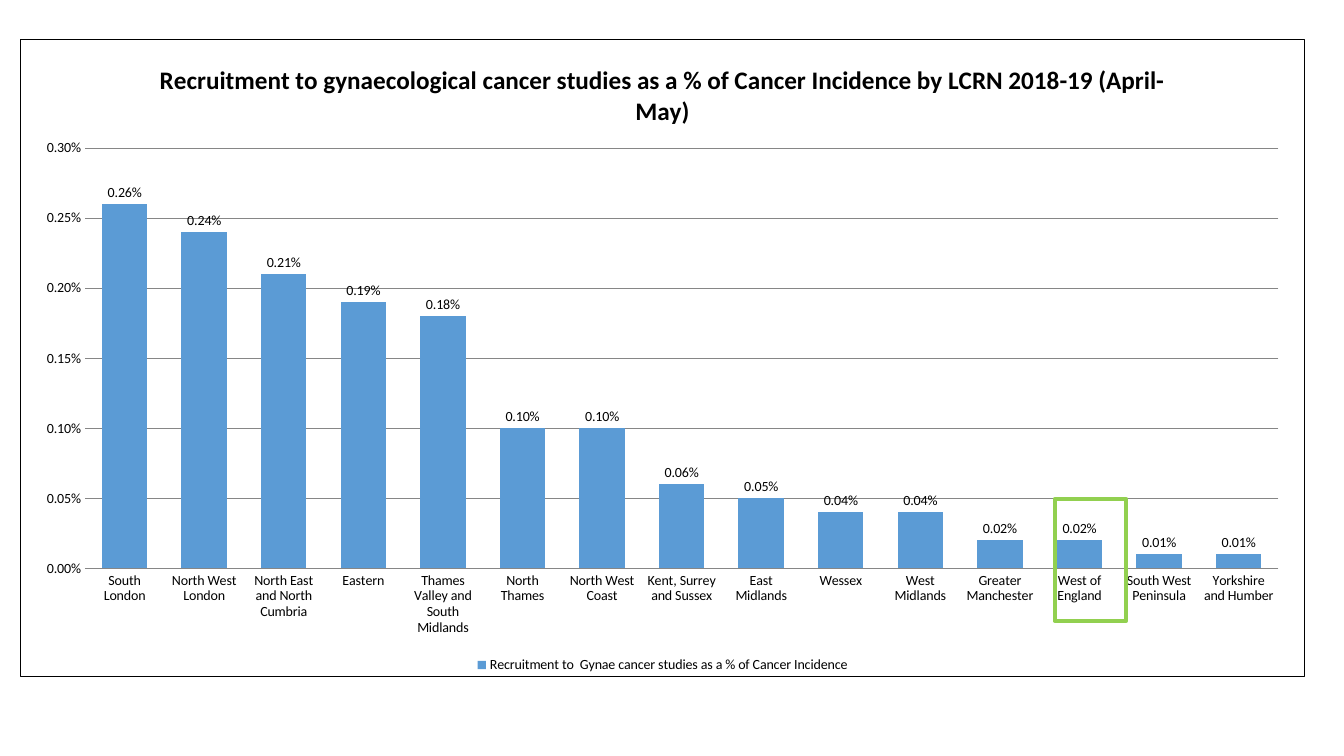
from lxml import etree
from pptx import Presentation
from pptx import util as u
from pptx.chart import data as chart_data
from pptx.dml.color import RGBColor
from pptx.enum import chart as ch, shapes
from pptx.oxml import parse_xml
from pptx.oxml.ns import nsdecls, qn

TITLE = ("Recruitment to gynaecological cancer studies as a % of "
         "Cancer Incidence by LCRN 2018-19 (April-May)")
MEASURE = "Recruitment to  Gynae cancer studies as a % of Cancer Incidence"
NETWORKS = [
    ("South London", 0.0026),
    ("North West London", 0.0024),
    ("North East and North Cumbria", 0.0021),
    ("Eastern", 0.0019),
    ("Thames Valley and South Midlands", 0.0018),
    ("North Thames", 0.001),
    ("North West Coast", 0.001),
    ("Kent, Surrey and Sussex", 0.0006),
    ("East Midlands", 0.0005),
    ("Wessex", 0.0004),
    ("West Midlands", 0.0004),
    ("Greater Manchester", 0.0002),
    ("West of England", 0.0002),
    ("South West Peninsula", 0.0001),
    ("Yorkshire and Humber", 0.0001),
]
PERCENT = "0.00%"
FONT = "Calibri"
BLACK, GREY, BLUE, GREEN = "000000", "868686", "5B9BD5", "92D050"
CHART_BOX = (0.2, 0.39, 12.74, 6.33)
PLOT_LAYOUT = {"x": 0.05, "y": 0.17, "w": 0.93, "h": 0.66}
HIGHLIGHT_BOX = (10.21, 5.2, 1.21, 0.71)


def color(target, hex_code):
    target.rgb = RGBColor.from_string(hex_code)


def style_font(font, size, bold=False):
    font.name, font.size, font.bold = FONT, u.Pt(size), bold
    color(font.color, BLACK)


def style_line(line, hex_code, width):
    color(line.color, hex_code)
    line.width = u.Pt(width)


def place_plot(chart):
    plot_area = chart._chartSpace.chart.plotArea
    for old in plot_area.findall(qn("c:layout")):
        plot_area.remove(old)
    layout = etree.Element(qn("c:layout"))
    manual = etree.SubElement(layout, qn("c:manualLayout"))
    settings = {"layoutTarget": "inner", "xMode": "edge", "yMode": "edge", **PLOT_LAYOUT}
    for name, value in settings.items():
        etree.SubElement(manual, qn("c:" + name), val=str(value))
    plot_area.insert(0, layout)


def add_border(chart):
    chart._chartSpace.chart.addnext(parse_xml(
        f'<c:spPr {nsdecls("c", "a")}><a:noFill/><a:ln w="{u.Pt(0.75)}">'
        f'<a:solidFill><a:srgbClr val="{BLACK}"/></a:solidFill></a:ln></c:spPr>'))


def add_recruitment_chart(slide):
    recruitment = chart_data.CategoryChartData(number_format=PERCENT)
    recruitment.categories = [name for name, _ in NETWORKS]
    recruitment.add_series(MEASURE, [share for _, share in NETWORKS])
    chart = slide.shapes.add_chart(
        ch.XL_CHART_TYPE.COLUMN_CLUSTERED, *map(u.Inches, CHART_BOX), recruitment).chart
    style_font(chart.font, 10)

    chart.has_title = True
    heading = chart.chart_title.text_frame.paragraphs[0].add_run()
    heading.text = TITLE
    style_font(heading.font, 18, bold=True)
    chart.chart_title.include_in_layout = False

    chart.has_legend = True
    chart.legend.position = ch.XL_LEGEND_POSITION.BOTTOM
    chart.legend.include_in_layout = False

    shares, networks = chart.value_axis, chart.category_axis
    for axis in (shares, networks):
        axis.major_tick_mark = axis.minor_tick_mark = ch.XL_TICK_MARK.NONE
    shares.minimum_scale, shares.maximum_scale, shares.major_unit = 0, 0.003, 0.0005
    shares.tick_labels.number_format = PERCENT
    shares.tick_labels.number_format_is_linked = False
    shares.format.line.fill.background()
    shares.has_major_gridlines = True
    style_line(shares.major_gridlines.format.line, GREY, 0.75)
    style_line(networks.format.line, GREY, 0.75)

    columns = chart.plots[0]
    columns.gap_width, columns.overlap = 75, -25
    columns.vary_by_categories = False
    bars = columns.series[0]
    bars.format.fill.solid()
    color(bars.format.fill.fore_color, BLUE)
    labels = bars.data_labels
    labels.show_value = True
    labels.number_format, labels.number_format_is_linked = PERCENT, False
    labels.position = ch.XL_LABEL_POSITION.OUTSIDE_END
    style_font(labels.font, 10)

    place_plot(chart)
    add_border(chart)


def add_highlight(slide):
    highlight = slide.shapes.add_shape(
        shapes.MSO_SHAPE.RECTANGLE, *map(u.Inches, HIGHLIGHT_BOX))
    highlight.rotation = 90
    highlight.shadow.inherit = False
    highlight.fill.background()
    style_line(highlight.line, GREEN, 3)


def main():
    deck = Presentation()
    deck.slide_width, deck.slide_height = u.Inches(13.33), u.Inches(7.5)
    slide = deck.slides.add_slide(deck.slide_layouts[6])
    add_recruitment_chart(slide)
    add_highlight(slide)
    deck.save("out.pptx")


if __name__ == "__main__":
    main()
